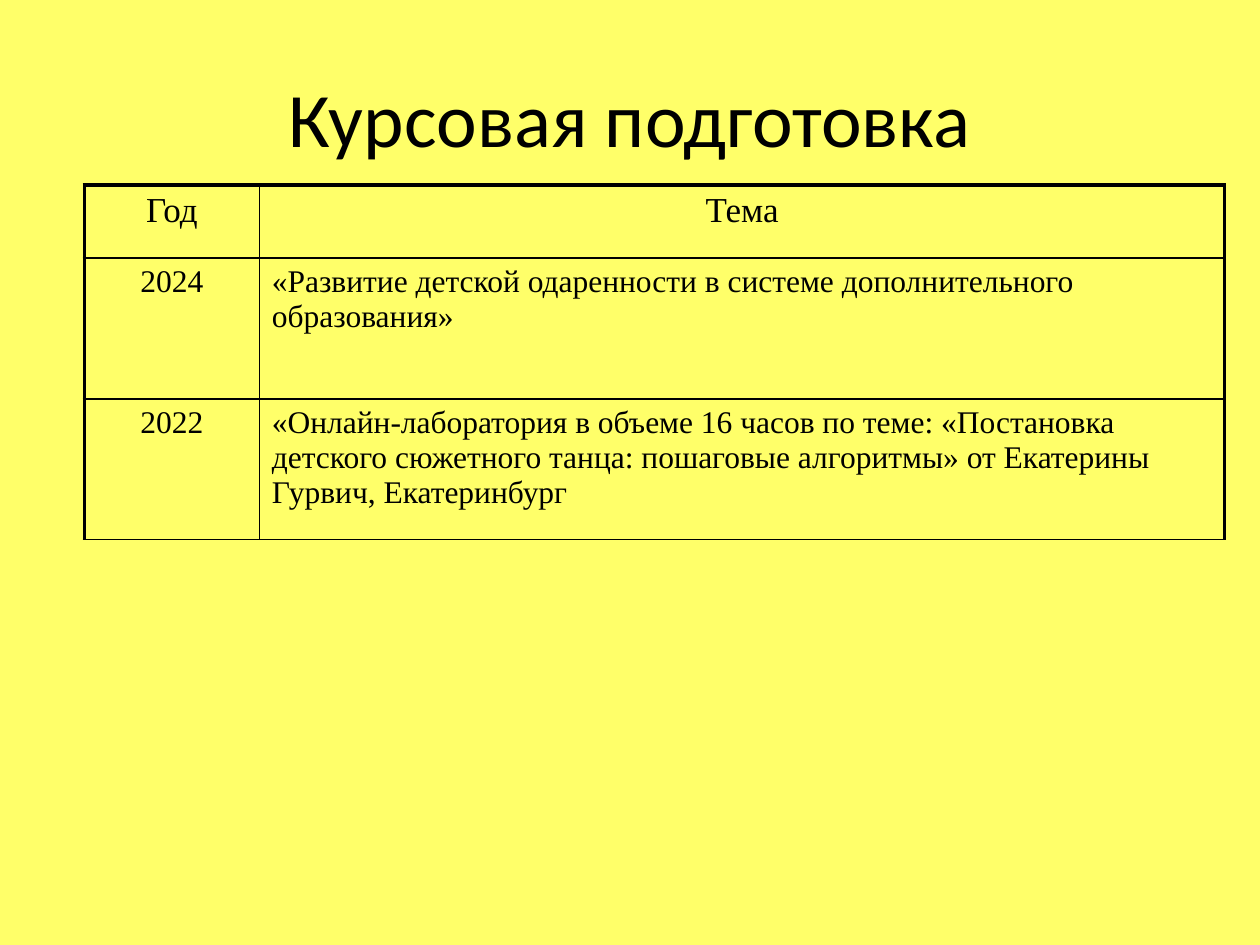
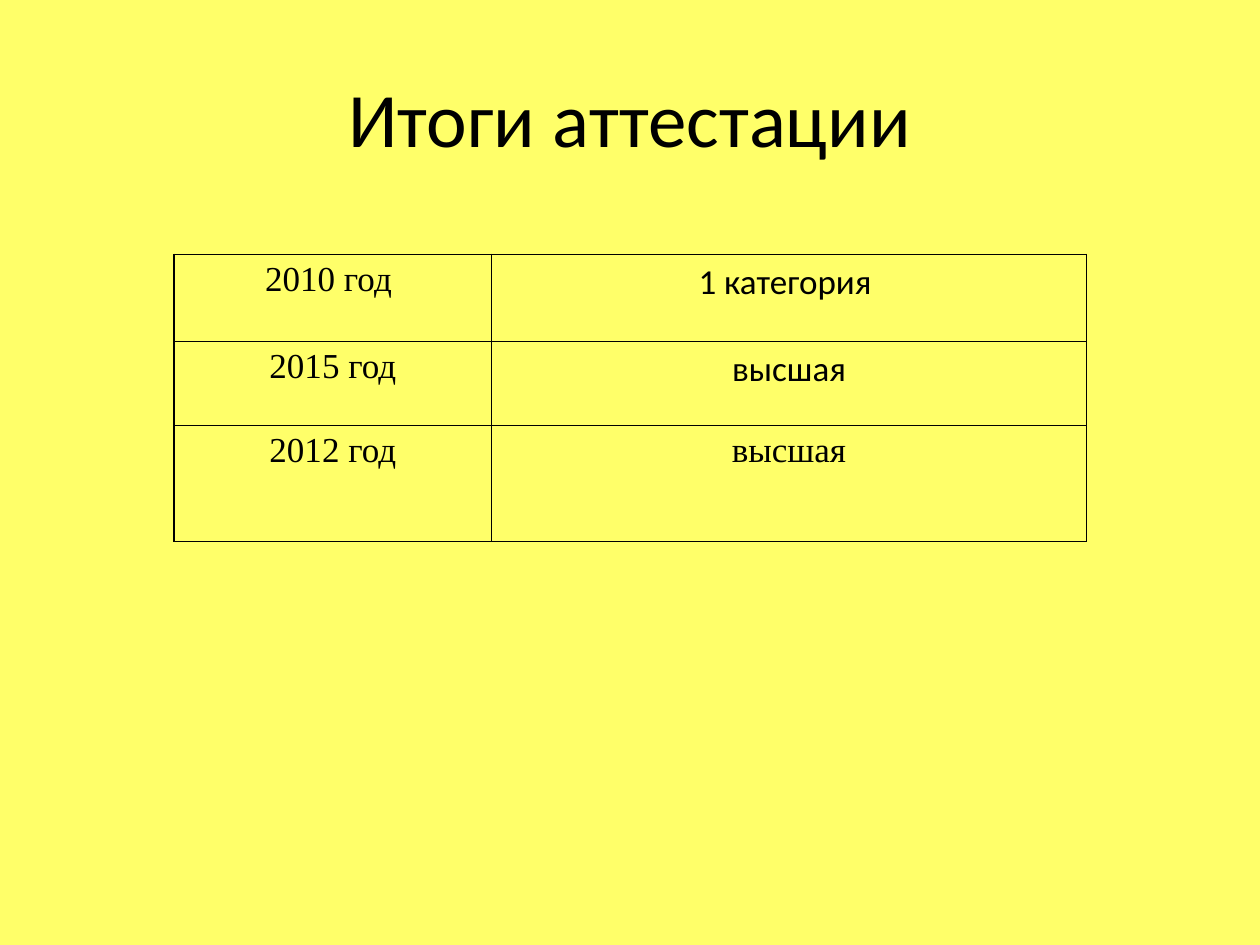
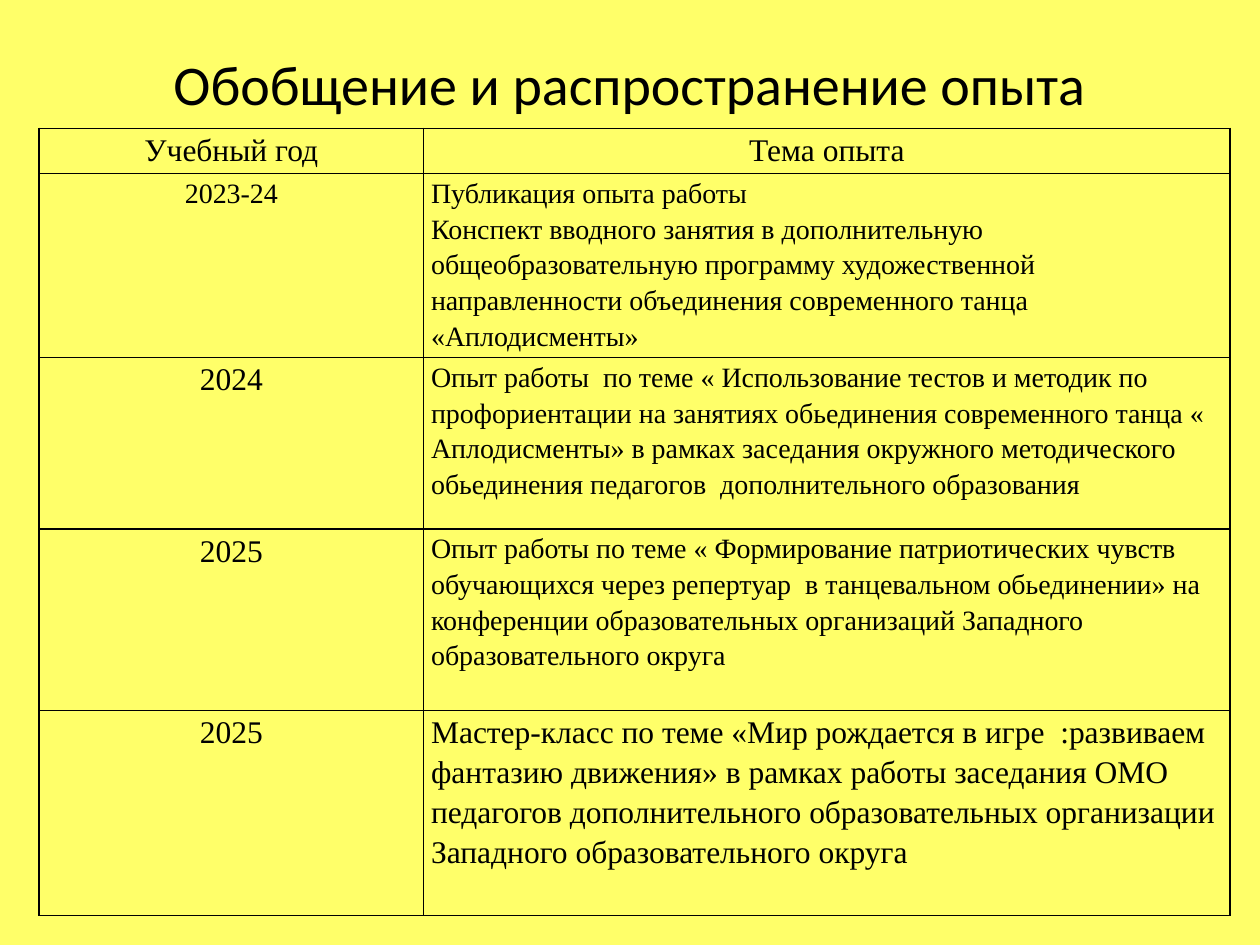
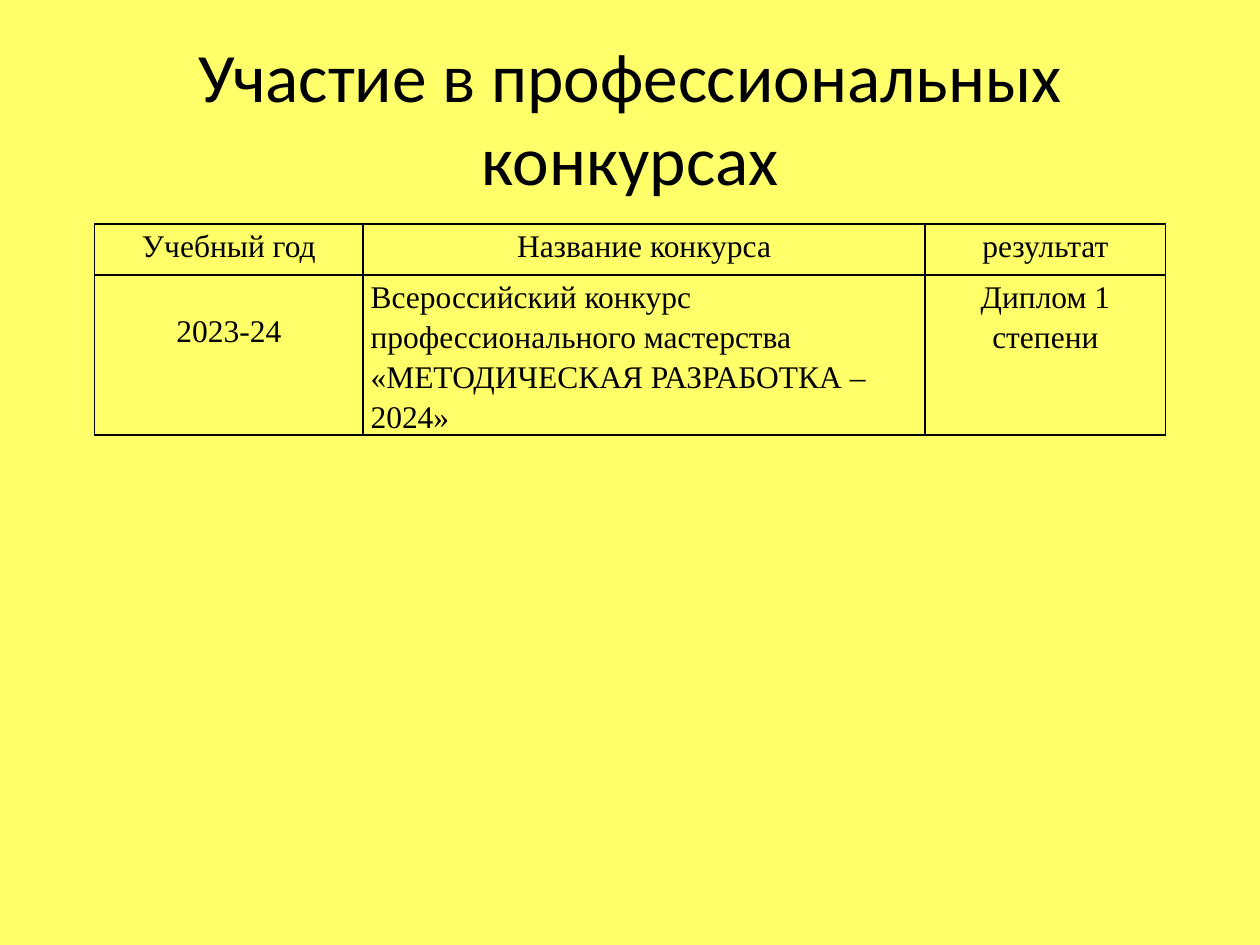
from lxml import etree
from pptx import Presentation
from pptx.dml.color import RGBColor
from pptx.enum.text import MSO_ANCHOR, MSO_AUTO_SIZE, PP_ALIGN
from pptx.oxml.ns import qn
from pptx.util import Cm, Pt

CENTER, LEFT = PP_ALIGN.CENTER, PP_ALIGN.LEFT
MIDDLE = MSO_ANCHOR.MIDDLE
NO_AUTOFIT = MSO_AUTO_SIZE.NONE

PALE_YELLOW = RGBColor(0xFF, 0xFF, 0x69)
BLACK = RGBColor(0x00, 0x00, 0x00)
SANS, SERIF = "Calibri", "Times New Roman"
TITLE_BOX = (1.27, 0.76, 22.86, 3.18)
THIN, THICK = 1, 2.25
TITLE_ONLY = 5


def style_paragraph(paragraph, size, font, **paragraph_format):
    for name, value in paragraph_format.items():
        setattr(paragraph, name, value)
    for run in paragraph.runs:
        run.font.size = Pt(size)
        run.font.name = font
        run.font.color.rgb = BLACK


def set_borders(cell, widths):
    """Draw black borders; widths are points for left, right, top, bottom."""
    properties = cell._tc.get_or_add_tcPr()
    for index, (side, width) in enumerate(zip("LRTB", widths)):
        line = etree.Element(qn(f"a:ln{side}"), w=str(Pt(width)))
        fill = etree.SubElement(line, qn("a:solidFill"))
        etree.SubElement(fill, qn("a:srgbClr"), val=str(BLACK))
        properties.insert(index, line)


# Each cell is (text, size) or (text, size, font); "\n" starts a paragraph.
# Row and column sizes, positions and margins are in centimetres.
slides = [
    {
        "title": "Курсовая подготовка", "title_size": 44,
        "at": (1.7, 3.73), "columns": (3.53, 19.46), "rows": (1.47, 2.84, 2.84),
        "margins": (0.25, 0.13), "frame": THICK, "aligns": (CENTER, LEFT),
        "spacing": {},
        "cells": [
            [("Год", 20), ("Тема", 20)],
            [("2024", 18),
             ("«Развитие детской одаренности в системе дополнительного образования»", 18)],
            [("2022", 18),
             ("«Онлайн-лаборатория в объеме 16 часов по теме: «Постановка детского "
              "сюжетного танца: пошаговые алгоритмы» от Екатерины Гурвич, Екатеринбург", 18)],
        ],
    },
    {
        "title": "Итоги аттестации", "title_size": 44,
        "at": (3.51, 5.13), "columns": (6.4, 11.99), "rows": (1.75, 1.7, 2.34),
        "margins": (0.18, 0), "frame": THIN, "aligns": (CENTER, CENTER),
        "spacing": {"line_spacing": 1.15, "space_after": Pt(10)},
        "cells": [
            [("2010 год ", 20), ("1 категория ", 20, SANS)],
            [("2015 год", 20), ("высшая", 20, SANS)],
            [("2012 год", 20), ("высшая", 20)],
        ],
    },
    {
        "title": "Обобщение и распространение опыта", "title_size": 32,
        "title_box": (1.27, 0.76, 22.86, 1.83),
        "at": (0.79, 2.59), "columns": (7.75, 16.26),
        "rows": (0.91, 3.71, 3.45, 3.66, 4.14),
        "margins": (0.15, 0), "frame": THIN, "aligns": (CENTER, LEFT),
        "spacing": {"line_spacing": 1.15},
        "cells": [
            [("Учебный год", 18), ("Тема опыта", 18)],
            [("2023-24", 16),
             ("Публикация опыта работы\n"
              "Конспект вводного занятия в дополнительную общеобразовательную программу "
              "художественной направленности объединения современного танца "
              "«Аплодисменты»", 16)],
            [("2024", 18),
             ("Опыт работы  по теме « Использование тестов и методик по профориентации на "
              "занятиях обьединения современного танца « Аплодисменты» в рамках заседания "
              "окружного методического обьединения педагогов  дополнительного "
              "образования", 16)],
            [("2025", 18),
             ("Опыт работы по теме « Формирование патриотических чувств обучающихся через "
              "репертуар  в танцевальном обьединении» на конференции образовательных "
              "организаций Западного образовательного округа", 16)],
            [("2025", 18),
             ("Мастер-класс по теме «Мир рождается в игре  :развиваем фантазию движения» в "
              "рамках работы заседания ОМО педагогов дополнительного образовательных "
              "организации Западного образовательного округа", 18)],
        ],
    },
    {
        "title": "Участие в профессиональных конкурсах", "title_size": 39.6,
        "at": (1.91, 4.52), "columns": (5.41, 11.33, 4.85), "rows": (1.02, 3.22),
        "margins": (0.15, 0), "frame": THIN, "aligns": (CENTER, LEFT, CENTER),
        "spacing": {"line_spacing": 1.15},
        "top_margins": {(1, 0): 0.7},
        "cells": [
            [("Учебный год", 18), ("Название конкурса", 18), ("результат", 18)],
            [("2023-24", 18),
             ("Всероссийский конкурс профессионального мастерства "
              "«МЕТОДИЧЕСКАЯ РАЗРАБОТКА – 2024»", 18),
             ("Диплом 1 степени", 18)],
        ],
    },
]

deck = Presentation()
deck.slide_width, deck.slide_height = Cm(25.4), Cm(19.05)
background = deck.slide_master.background.fill
background.solid()
background.fore_color.rgb = PALE_YELLOW

for content in slides:
    slide = deck.slides.add_slide(deck.slide_layouts[TITLE_ONLY])

    title = slide.shapes.title
    title_box = content.get("title_box", TITLE_BOX)
    for name, length in zip(("left", "top", "width", "height"), title_box):
        setattr(title, name, Cm(length))
    title.text_frame.text = content["title"]
    title.text_frame.auto_size = NO_AUTOFIT
    title.text_frame.vertical_anchor = MIDDLE
    style_paragraph(title.text_frame.paragraphs[0], content["title_size"], SANS,
                    alignment=CENTER)

    left, top = content["at"]
    columns, rows = content["columns"], content["rows"]
    table = slide.shapes.add_table(len(rows), len(columns), Cm(left), Cm(top),
                                   Cm(sum(columns)), Cm(sum(rows))).table
    table.first_row = table.horz_banding = False
    for column, width in zip(table.columns, columns):
        column.width = Cm(width)
    for row, height in zip(table.rows, rows):
        row.height = Cm(height)

    side_margin, end_margin = content["margins"]
    top_margins = content.get("top_margins", {})
    frame = content["frame"]
    for r, row_cells in enumerate(content["cells"]):
        for c, (text, size, *font) in enumerate(row_cells):
            cell = table.cell(r, c)
            cell.text = text
            cell.margin_left = cell.margin_right = Cm(side_margin)
            cell.margin_top = Cm(top_margins.get((r, c), end_margin))
            cell.margin_bottom = Cm(end_margin)
            cell.fill.background()
            set_borders(cell, (frame if c == 0 else THIN,
                               frame if c == len(columns) - 1 else THIN,
                               frame if r == 0 else THIN,
                               THIN))
            is_heading = r == 0
            for paragraph in cell.text_frame.paragraphs:
                style_paragraph(paragraph, size, font[0] if font else SERIF,
                                alignment=CENTER if is_heading else content["aligns"][c],
                                **content["spacing"])

deck.save("out.pptx")
